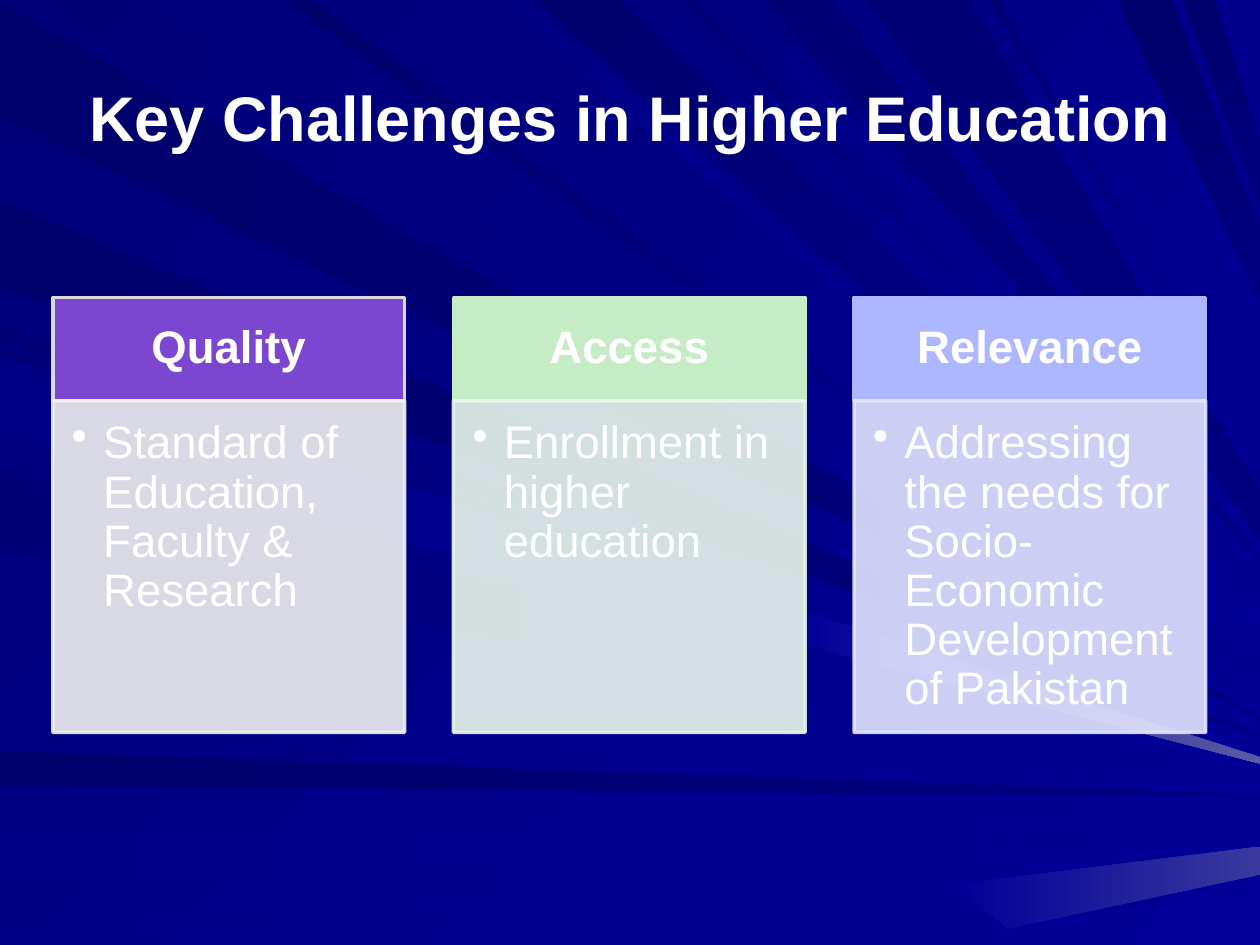
from pptx import Presentation
from pptx.dml.color import RGBColor as RGB
from pptx.enum.shapes import MSO_SHAPE as SHAPE
from pptx.enum.text import MSO_ANCHOR as ANCHOR, PP_ALIGN as ALIGN
from pptx.oxml.ns import qn
from pptx.util import Pt
from lxml import etree

FONT = "Arial"
WHITE = RGB.from_string("FFFFFF")
NAVY, ROYAL, DEEP = map(RGB.from_string, ("000078", "000099", "000080"))
ABYSS, MIDNIGHT, DUSK = map(RGB.from_string, ("00006C", "000076", "000087"))
GLOW, SOFT_GLOW = map(RGB.from_string, ("5A5AA6", "39399E"))
PURPLE, SILVER, PALE = map(RGB.from_string, ("7B46D0", "DADADA", "F1F1F1"))
GREEN, PALE_GREEN = map(RGB.from_string, ("C5ECC5", "EAF8EA"))
BLUE, PALE_BLUE = map(RGB.from_string, ("ADB7FF", "E3E5FF"))

# Rays lie on a grid of 1000 by 750 units and end on the right edge.
# Each ray: start and stop on its first edge, top and bottom on the right edge.
GRID = Pt(0.72)
RIGHT = 1000
LEFT_RAYS = [
    (ABYSS, DEEP, [(2, 93, 569, 570), (596, 623, 631, 632), (159, 228, 584, 585)]),
    (MIDNIGHT, ROYAL, [(258, 270, 589, 590), (278, 342, 596, 602), (374, 437, 605, 606)]),
    (DUSK, ROYAL, [(665, 704, 643, 651), (735, 750, 662, 663), (552, 560, 621, 623),
                   (283, 347, 601, 606)]),
]
TOP_RAYS = [
    (MIDNIGHT, ROYAL, [(101, 26, 562, 563), (552, 540, 462, 463), (792, 785, 354, 360)]),
    (ABYSS, ROYAL, [(492, 426, 479, 507), (247, 225, 547, 552)]),
    (MIDNIGHT, DEEP, [(661, 606, 445, 446), (770, 686, 390, 428)]),
    (ABYSS, DEEP, [(930, 887, 183, 237), (964, 939, 114, 167)]),
    (DUSK, ROYAL, [(416, 398, 515, 521), (588, 577, 453, 454), (824, 815, 335, 336),
                   (872, 865, 249, 258)]),
]
HIGHLIGHTS = [
    (GLOW, [(637, 485), (RIGHT, 601), (RIGHT, 606), (633, 511)]),
    (SOFT_GLOW, [(756, 702), (RIGHT, 672), (RIGHT, 694), (800, 737)]),
]

# Each challenge: heading, detail, heading fill, heading border, detail fill
CHALLENGES = [
    ("Quality", "Standard of Education, Faculty & Research", PURPLE, SILVER, PALE),
    ("Access", "Enrollment in higher education", GREEN, GREEN, PALE_GREEN),
    ("Relevance", "Addressing the needs for Socio-Economic Development of Pakistan",
     BLUE, BLUE, PALE_BLUE),
]


def paint(fill, start, end, angle):
    fill.gradient()
    fill.gradient_angle = -angle % 360
    for stop, color in zip(fill.gradient_stops, (start, end)):
        stop.color.rgb = color


def add_ray(slide, start, end, angle, corners):
    builder = slide.shapes.build_freeform(*corners[0], scale=GRID)
    builder.add_line_segments(corners[1:], close=True)
    ray = builder.convert_to_shape()
    ray.shadow.inherit = False
    ray.line.fill.background()
    paint(ray.fill, start, end, angle)


def add_rays(slide):
    for start, end, spans in LEFT_RAYS:
        for first, last, top, bottom in spans:
            add_ray(slide, start, end, 0,
                    [(0, first), (RIGHT, top), (RIGHT, bottom), (0, last)])
    for start, end, spans in TOP_RAYS:
        for first, last, top, bottom in spans:
            add_ray(slide, start, end, 90 if end == DEEP else 45,
                    [(first, 0), (RIGHT, top), (RIGHT, bottom), (last, 0)])
    for color, corners in HIGHLIGHTS:
        add_ray(slide, ROYAL, color, 0, corners)


def write(frame, text, size, bold=False, align=ALIGN.CENTER, anchor=ANCHOR.MIDDLE,
          margins=(7.2, 3.6, 7.2, 3.6), bullet=False):
    frame.word_wrap = True
    frame.vertical_anchor = anchor
    (frame.margin_left, frame.margin_top,
     frame.margin_right, frame.margin_bottom) = map(Pt, margins)
    paragraph = frame.paragraphs[0]
    paragraph.text = text
    paragraph.alignment = align
    if bullet:
        properties = paragraph._p.get_or_add_pPr()
        properties.set("marL", str(Pt(18)))
        properties.set("indent", str(-Pt(18)))
        etree.SubElement(properties, qn("a:buChar")).set("char", "•")
    font = paragraph.font
    font.name, font.size, font.bold = FONT, Pt(size), bold
    font.color.rgb = WHITE
    return paragraph


def add_panel(slide, left, top, width, height, fill, border, opacity=100):
    panel = slide.shapes.add_shape(SHAPE.RECTANGLE, Pt(left), Pt(top), Pt(width), Pt(height))
    panel.shadow.inherit = False
    panel.fill.solid()
    panel.fill.fore_color.rgb = fill
    panel.line.color.rgb = border
    panel.line.width = Pt(2)
    if opacity < 100:
        for color in panel._element.spPr.iter(qn("a:srgbClr")):
            etree.SubElement(color, qn("a:alpha")).set("val", str(opacity * 1000))
    return panel.text_frame


def add_challenge(slide, left, heading, detail, fill, border, pale):
    width, top, heading_height, detail_height = 201, 170, 59, 189.5
    head = add_panel(slide, left, top, width, heading_height, fill, border)
    write(head, heading, 26, bold=True, margins=(14.4, 8.6, 14.4, 8.6)).line_spacing = 0.9
    body = add_panel(slide, left, top + heading_height, width, detail_height, pale, pale, 90)
    write(body, detail, 26, align=ALIGN.LEFT, anchor=ANCHOR.TOP,
          margins=(10.8, 10.8, 14.4, 16.6), bullet=True).line_spacing = 0.9


def main():
    deck = Presentation()
    deck.slide_width, deck.slide_height = Pt(720), Pt(540)
    slide = deck.slides.add_slide(deck.slide_layouts[6])

    # Background with light rays
    paint(slide.background.fill, NAVY, ROYAL, 45)
    add_rays(slide)

    # Title
    title = slide.shapes.add_textbox(Pt(36), Pt(21.6), Pt(648), Pt(90))
    write(title.text_frame, "Key Challenges in Higher Education", 36, bold=True)

    # Three columns of challenges
    for column, challenge in enumerate(CHALLENGES):
        add_challenge(slide, 30.2 + column * 228.9, *challenge)

    deck.save("out.pptx")


if __name__ == "__main__":
    main()
